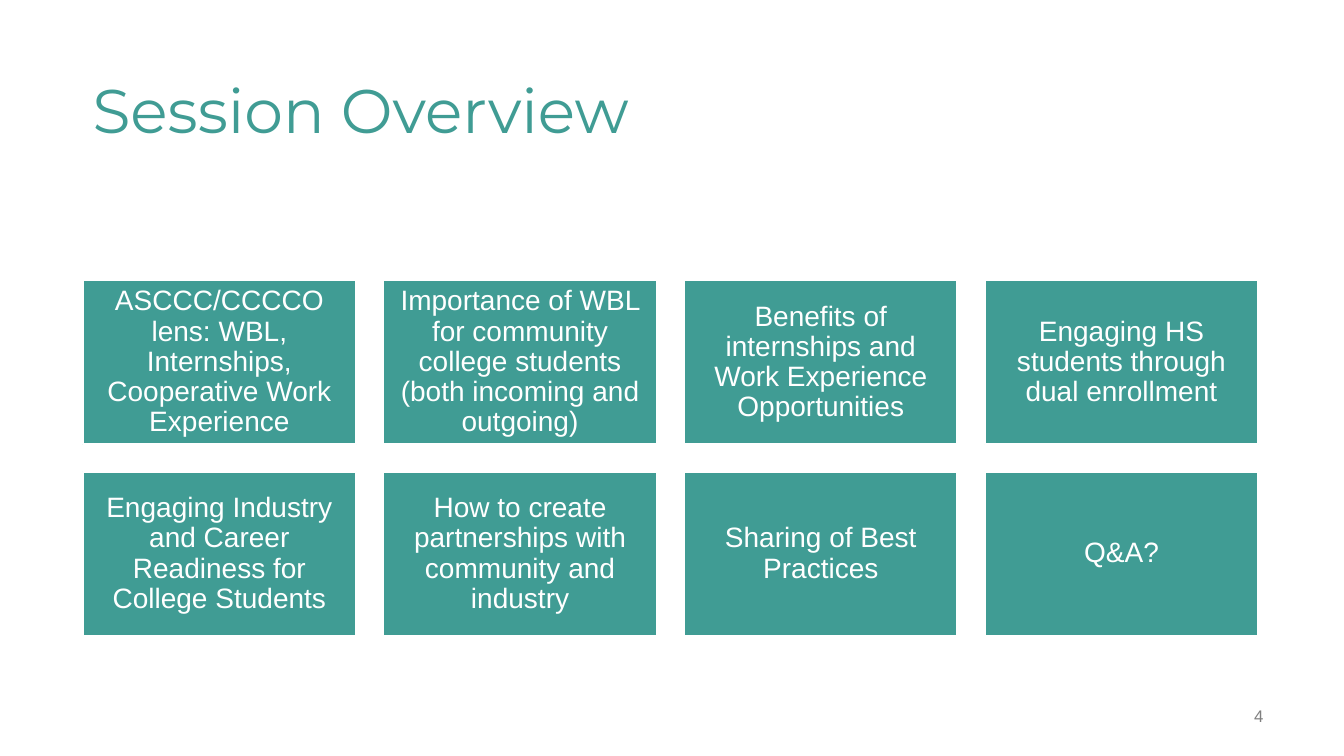
from pptx import Presentation
from pptx.dml.color import RGBColor
from pptx.enum.shapes import MSO_SHAPE
from pptx.enum.text import MSO_ANCHOR, PP_ALIGN
from pptx.util import Inches, Pt

TEAL = RGBColor(0x40, 0x9C, 0x94)
WHITE = RGBColor(0xFF, 0xFF, 0xFF)
GRAY = RGBColor(0x7F, 0x7F, 0x7F)

TOPICS = [
    "ASCCC/CCCCO lens: WBL, Internships, Cooperative Work Experience",
    "Importance of WBL for community college students (both incoming and outgoing)",
    "Benefits of internships and Work Experience Opportunities",
    "Engaging HS students through dual enrollment",
    "Engaging Industry and Career Readiness for College Students",
    "How to create partnerships with community and industry",
    "Sharing of Best Practices",
    "Q&A?",
]


def write(shape, text, size, color, font="Arial", align=PP_ALIGN.LEFT,
          spacing=0.9, inset=(0.1, 0.05, 0.1, 0.05)):
    frame = shape.text_frame
    frame.word_wrap = True
    frame.vertical_anchor = MSO_ANCHOR.MIDDLE
    left, top, right, bottom = inset
    frame.margin_left, frame.margin_top = Inches(left), Inches(top)
    frame.margin_right, frame.margin_bottom = Inches(right), Inches(bottom)
    para = frame.paragraphs[0]
    para.alignment = align
    para.line_spacing = spacing
    run = para.add_run()
    run.text = text
    run.font.size = Pt(size)
    run.font.name = font
    run.font.color.rgb = color


def add_title(slide, box, text):
    shape = slide.shapes.add_textbox(*map(Inches, box))
    write(shape, text, 44, TEAL, font="Montserrat")


def add_number(slide, box, text):
    shape = slide.shapes.add_textbox(*map(Inches, box))
    write(shape, text, 12, GRAY, align=PP_ALIGN.RIGHT, spacing=1.0,
          inset=(0.1, 0.05, 0, 0.05))


def add_card(slide, box, text):
    card = slide.shapes.add_shape(MSO_SHAPE.RECTANGLE, *map(Inches, box))
    card.shadow.inherit = False
    card.fill.solid()
    card.fill.fore_color.rgb = TEAL
    card.line.color.rgb = WHITE
    card.line.width = Pt(1.5)
    write(card, text, 20, WHITE, align=PP_ALIGN.CENTER, inset=(0.08,) * 4)


def add_grid(slide, box, topics, cols=4, gap=0.27):
    left, top, width, height = box
    rows = len(topics) // cols
    wide = (width - gap * (cols - 1)) / cols
    high = (height - gap * (rows - 1)) / rows
    for index, topic in enumerate(topics):
        row, col = divmod(index, cols)
        place = (left + col * (wide + gap), top + row * (high + gap), wide, high)
        add_card(slide, place, topic)


def main():
    deck = Presentation()
    deck.slide_width, deck.slide_height = Inches(13.33), Inches(7.5)
    slide = deck.slides.add_slide(deck.slide_layouts[6])
    add_title(slide, (0.82, 0.4, 11.6, 1.45), "Session Overview")
    add_number(slide, (11.23, 6.71, 1.3, 0.79), "4")
    add_grid(slide, (0.82, 2.78, 11.66, 3.53), TOPICS)
    deck.save("out.pptx")


if __name__ == "__main__":
    main()
